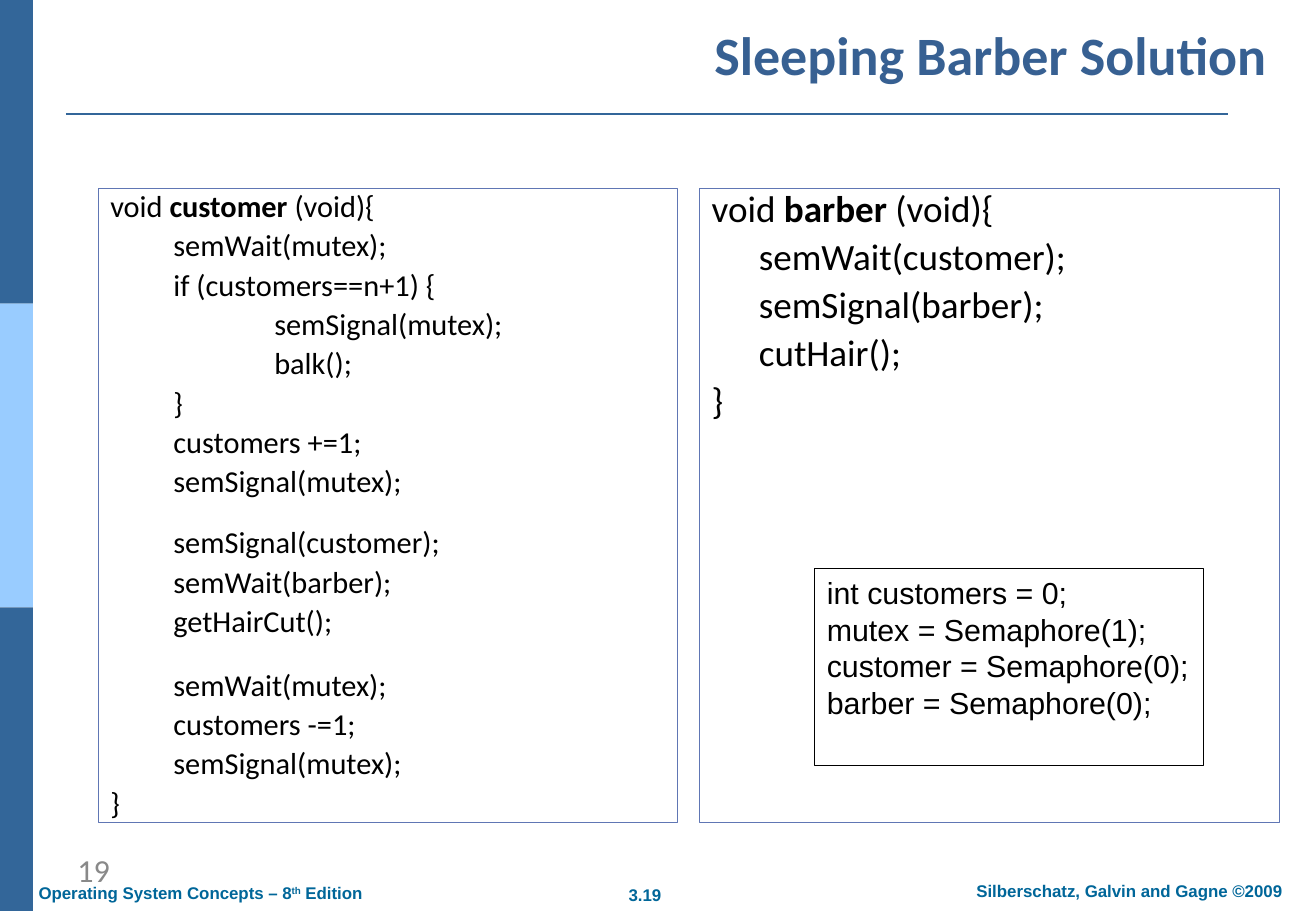
from dataclasses import dataclass

from lxml.etree import SubElement
from pptx import Presentation
from pptx.dml.color import RGBColor
from pptx.enum.shapes import MSO_CONNECTOR as CONN, MSO_SHAPE as SHAPE
from pptx.enum.text import MSO_ANCHOR as ANCHOR, PP_ALIGN as ALIGN
from pptx.oxml.ns import qn
from pptx.util import Pt


@dataclass(frozen=True)
class Theme:
    head_font: str = "Calibri"
    plain_font: str = "Arial"
    dark: str = "336699"
    light: str = "99CCFF"
    title: str = "376092"
    frame: str = "6076B4"
    footer: str = "006699"
    number: str = "898989"
    ink: str = "000000"
    title_size: float = 32
    barber_size: float = 22
    number_size: float = 19
    code_size: float = 18
    footer_size: float = 10


T = Theme()
TITLE = dict(name=T.head_font, size=T.title_size, color=T.title, bold=True)
NUMBER = dict(name=T.head_font, size=T.number_size, color=T.number)
FOOTER = dict(name=T.plain_font, size=T.footer_size, color=T.footer, bold=True)
CUSTOMER = dict(name=T.head_font, size=T.code_size, color=T.ink)
BARBER = dict(CUSTOMER, size=T.barber_size)
SHARED = dict(CUSTOMER, name=T.plain_font)

# Margin and first-line indent of each code level
LEVELS = {0: (28, -28), 1: (61.2, -23.8)}

# Each code line: level, text pieces, extra space above
CUSTOMER_CODE = [
    (0, ["void ", "*customer", " (void){"], 0),
    (1, ["semWait(mutex);"], 0),
    (1, ["if (customers==n+1) {"], 0),
    (1, ["\t\tsemSignal(mutex);"], 0),
    (1, ["\t\tbalk();"], 0),
    (1, ["}"], 0),
    (1, ["customers +=1;"], 0),
    (1, ["semSignal(mutex);"], 0),
    (1, ["semSignal(customer);"], 13),
    (1, ["semWait(barber);"], 0),
    (1, ["getHairCut();"], 0),
    (1, ["semWait(mutex);"], 14.4),
    (1, ["customers -=1;"], 0),
    (1, ["semSignal(mutex);"], 0),
    (0, ["}"], 0),
]
BARBER_CODE = [
    (0, ["void ", "*barber", " (void){"], 0),
    (0, ["\tsemWait(customer);"], 0),
    (0, ["\tsemSignal(barber);"], 0),
    (0, ["\tcutHair();"], 0),
    (0, ["}"], 0),
]
SHARED_CODE = ["int customers = 0;", "mutex = Semaphore(1);",
               "customer = Semaphore(0);", "barber = Semaphore(0);"]


def add_run(p, text, fmt):
    r = p.add_run()
    r.text = text
    for key, value in fmt.items():
        if key == "color":
            r.font.color.rgb = RGBColor.from_string(value)
        else:
            setattr(r.font, key, Pt(value) if key == "size" else value)
    return r


def add_rect(s, box, fill=None, line=None):
    sp = s.shapes.add_shape(SHAPE.RECTANGLE, *map(Pt, box))
    sp.shadow.inherit = False
    for part, color in ((sp.fill, fill), (sp.line.fill, line)):
        if color:
            part.solid()
            part.fore_color.rgb = RGBColor.from_string(color)
        else:
            part.background()
    if line:
        sp.line.width = Pt(0.75)
    tf = sp.text_frame
    tf.word_wrap, tf.vertical_anchor = True, ANCHOR.TOP
    return sp


def add_label(s, box, text, fmt, align=ALIGN.LEFT, anchor=ANCHOR.TOP):
    tf = s.shapes.add_textbox(*map(Pt, box)).text_frame
    tf.word_wrap, tf.vertical_anchor = True, anchor
    p = tf.paragraphs[0]
    p.alignment = align
    add_run(p, text, fmt)
    return p


def side_bar(s, box):
    x, y, w, h = box
    for i, color in enumerate((T.dark, T.light, T.dark)):
        add_rect(s, (x, y + i * h / 3, w, h / 3), fill=color)


def header(s, box):
    x, y, w, h = box
    add_label(s, (x + 56, y, w - 56, 54.7), "Sleeping Barber Solution", TITLE,
              ALIGN.RIGHT, ANCHOR.BOTTOM)
    # Rule under the title
    rule = s.shapes.add_connector(
        CONN.STRAIGHT, *map(Pt, (x, y + h, x + w - 30.2, y + h)))
    rule.line.color.rgb = RGBColor.from_string(T.dark)
    rule.line.width = Pt(1.5)
    SubElement(rule._element.spPr, qn("a:effectLst"))


def code_panel(s, box, code, fmt):
    tf = add_rect(s, box, line=T.frame).text_frame
    for i, (level, pieces, extra) in enumerate(code):
        p = tf.add_paragraph() if i else tf.paragraphs[0]
        p.level, p.line_spacing, p.alignment = level, 0.8, ALIGN.LEFT
        p.space_before = Pt(fmt["size"] / 3 + extra if i else 0)
        for key, value in zip(("marL", "indent"), LEVELS[level]):
            p._p.get_or_add_pPr().set(key, str(Pt(value)))
        # A leading star marks the bold function name
        for piece in pieces:
            add_run(p, piece.lstrip("*"), dict(fmt, bold=piece[0] == "*"))


def shared_panel(s, box):
    tf = add_rect(s, box, line=T.ink).text_frame
    for i, text in enumerate(SHARED_CODE):
        p = tf.add_paragraph() if i else tf.paragraphs[0]
        p.alignment = ALIGN.LEFT
        add_run(p, text, SHARED)


def footer(s, box):
    x, y, w, h = box
    add_label(s, (x + 23, y, 182, 28.8), "19", NUMBER)
    p = add_label(s, (x, y + 19.5, 225, 20), "Operating System Concepts – 8", FOOTER)
    add_run(p, "th", FOOTER)._r.get_or_add_rPr().set("baseline", "30000")
    add_run(p, " Edition", FOOTER)
    add_label(s, (x + 348.5, y + 20.2, 36, 20), "3.19", FOOTER, ALIGN.CENTER)
    add_label(s, (x + w - 231, y + 18, 231, 20),
              "Silberschatz, Galvin and Gagne ©2009", FOOTER, ALIGN.CENTER)


def main():
    prs = Presentation()
    prs.slide_width, prs.slide_height = Pt(780), Pt(540)
    s = prs.slides.add_slide(prs.slide_layouts[6])
    side_bar(s, (0, 0, 19.5, 540))
    header(s, (39, 0, 719.2, 67.7))
    # Two equal code panels side by side
    panels = ((CUSTOMER_CODE, CUSTOMER), (BARBER_CODE, BARBER))
    for i, (code, fmt) in enumerate(panels):
        code_panel(s, (58.3 + i * 356.5, 111.6, 343.5, 375.8), code, fmt)
    shared_panel(s, (483, 337, 230.4, 116.6))
    footer(s, (15.8, 500.4, 769, 39.6))
    prs.save("out.pptx")


if __name__ == "__main__":
    main()
